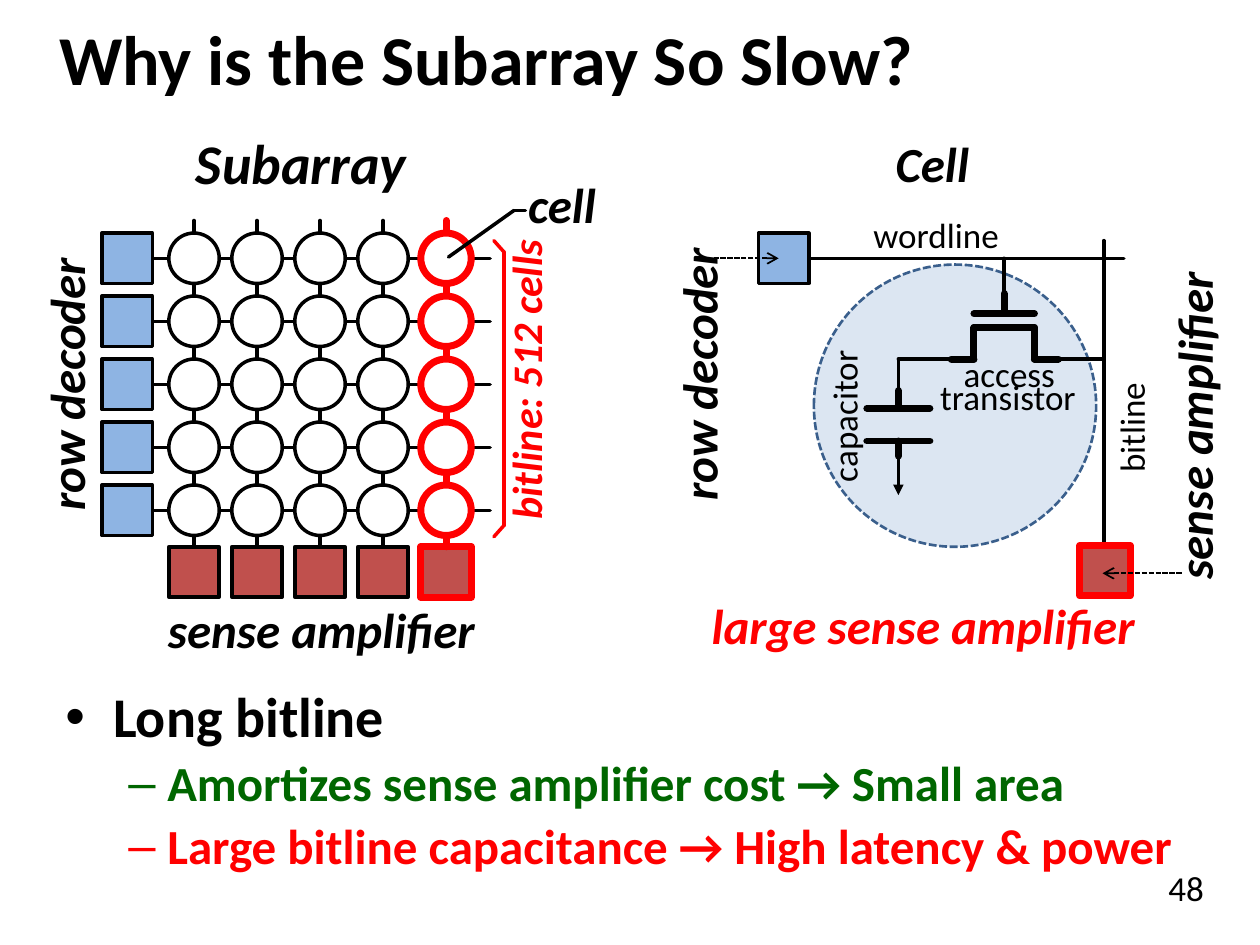
from itertools import pairwise

from lxml import etree
from pptx import Presentation
from pptx import util as u
from pptx.dml.color import RGBColor
from pptx.enum import dml, shapes, text
from pptx.oxml.ns import qn

SCALE = 9144
BLACK = RGBColor(0x00, 0x00, 0x00)
WHITE = RGBColor(0xFF, 0xFF, 0xFF)
RED = RGBColor(0xFF, 0x00, 0x00)
GREEN = RGBColor(0x00, 0x66, 0x00)
DECODER_BLUE = RGBColor(0x8E, 0xB4, 0xE3)
AMPLIFIER_RED = RGBColor(0xC0, 0x50, 0x4D)
CELL_BLUE = RGBColor(0xDC, 0xE6, 0xF2)
CELL_EDGE = RGBColor(0x3A, 0x5F, 0x8C)
FONT = "Calibri"
RECTANGLE = shapes.MSO_SHAPE.RECTANGLE
OVAL = shapes.MSO_SHAPE.OVAL
CENTER = text.PP_ALIGN.CENTER
LEFT = text.PP_ALIGN.LEFT
MIDDLE = text.MSO_ANCHOR.MIDDLE
TOP = text.MSO_ANCHOR.TOP
ROWS = [205 + 50 * row for row in range(5)]
COLUMNS = [154 + 50 * column for column in range(5)]
SIDE = 40


def px(*lengths):
    """Turn pixel lengths into EMU."""
    return [u.Emu(length * SCALE) for length in lengths]


def format_runs(paragraph, size, color, bold, italic=False):
    """Give every run of a paragraph its font."""
    for run in paragraph.runs:
        font = run.font
        font.name, font.size = FONT, u.Pt(size)
        font.bold, font.italic = bold, italic
        font.color.rgb = color


def add_frame(slide, box, margins=(0, 0), anchor=MIDDLE, rotation=0):
    """Add an empty wrapping text box and return its text frame."""
    shape = slide.shapes.add_textbox(*px(*box))
    shape.rotation = rotation
    frame = shape.text_frame
    frame.word_wrap = True
    frame.vertical_anchor = anchor
    frame.margin_left, frame.margin_top = px(*margins)
    frame.margin_right = frame.margin_bottom = 0
    return frame


def add_label(slide, words, box, size=28, color=BLACK, bold=True, italic=True,
              align=CENTER, **layout):
    """Add one line of text in a box."""
    frame = add_frame(slide, box, **layout)
    frame.text = words
    paragraph = frame.paragraphs[0]
    paragraph.alignment = align
    format_runs(paragraph, size, color, bold, italic)


def add_node(slide, kind, center, fill, edge=BLACK, weight=2, side=SIDE):
    """Add an outlined square or circle around a centre point."""
    x, y = center
    shape = slide.shapes.add_shape(kind, *px(x - side // 2, y - side // 2, side, side))
    shape.shadow.inherit = False
    shape.fill.solid()
    shape.fill.fore_color.rgb = fill
    shape.line.color.rgb = edge
    shape.line.width = u.Pt(weight)
    return shape


def add_wire(slide, *points, color=BLACK, weight=2, dashed=False, head=None, tail=None):
    """Join the points with straight connectors."""
    for start, end in pairwise(points):
        connector = slide.shapes.add_connector(
            shapes.MSO_CONNECTOR.STRAIGHT, *px(*start, *end))
        connector.line.color.rgb = color
        connector.line.width = u.Pt(weight)
        properties = connector.element.spPr
        outline = properties.find(qn("a:ln"))
        if dashed:
            connector.line.dash_style = dml.MSO_LINE.SQUARE_DOT
        else:
            outline.set("cap", "rnd")
        for tag, arrow in (("a:headEnd", head), ("a:tailEnd", tail)):
            if arrow:
                etree.SubElement(outline, qn(tag), type=arrow)
        etree.SubElement(properties, qn("a:effectLst"))


def add_bullet(paragraph, words, mark, size, color, margin, indent, before):
    """Fill a paragraph as a bold bulleted line."""
    paragraph.text = words
    paragraph.line_spacing = 0.9
    paragraph.space_before = u.Pt(before)
    format_runs(paragraph, size, color, True)
    properties = paragraph._p.get_or_add_pPr()
    properties.set("marL", str(margin * SCALE))
    properties.set("indent", str(-indent * SCALE))
    etree.SubElement(properties, qn("a:buFont"), typeface="Arial")
    etree.SubElement(properties, qn("a:buChar"), char=mark)


def add_subarray(slide):
    """Draw the grid of cells with its decoders and amplifiers."""
    add_label(slide, "Subarray", (58, 108, 362, 42), size=32)
    for y in ROWS:
        add_wire(slide, (389, y), (121, y))
        add_node(slide, RECTANGLE, (101, y), DECODER_BLUE)
    for x in COLUMNS:
        edge, weight = (RED, 4) if x == COLUMNS[-1] else (BLACK, 2)
        add_node(slide, RECTANGLE, (x, 454), AMPLIFIER_RED, edge, weight)
        add_wire(slide, (x, 434), (x, 175), color=edge, weight=weight)
        for y in ROWS:
            add_node(slide, OVAL, (x, y), WHITE, edge, weight)
    add_label(slide, "row decoder", (-68, 284, 240, 42), rotation=270)
    add_label(slide, "sense amplifier", (102, 473, 306, 53))
    add_label(slide, "bitline: 512 cells", (277, 276, 280, 51), size=24, color=RED,
              rotation=270)
    add_wire(slide, (392, 191), (400, 200), (400, 417), (392, 426), color=RED)
    add_wire(slide, (417, 167), (408, 167), (356, 204))
    add_label(slide, "cell", (400, 142, 92, 39))


def add_cell(slide):
    """Draw one cell with its transistor, capacitor and lines."""
    circle = add_node(slide, OVAL, (758, 322), CELL_BLUE, CELL_EDGE, 1.5, side=224)
    circle.line.dash_style = dml.MSO_LINE.SQUARE_DOT
    add_node(slide, RECTANGLE, (622, 205), DECODER_BLUE)
    for words, box, rotation in (
        ("capacitor", (607, 311, 125, 39), 270),
        ("access", (730, 276, 142, 41), 0),
        ("transistor", (730, 291, 140, 47), 0),
        ("wordline", (630, 168, 226, 36), 0),
        ("bitline", (804, 320, 187, 39), 270),
    ):
        add_label(slide, words, box, size=20, bold=False, italic=False, rotation=rotation)
    for points in (
        [(892, 205), (642, 205)],
        [(876, 442), (876, 191)],
        [(797, 205), (797, 236)],
        [(876, 285), (840, 285)],
        [(755, 285), (713, 285), (713, 310)],
    ):
        add_wire(slide, *points)
    for points in (
        [(797, 248), (797, 233)],
        [(821, 249), (773, 249)],
        [(755, 285), (773, 285), (773, 260), (821, 260), (821, 285), (840, 285)],
        [(713, 324), (713, 310)],
        [(738, 324), (688, 324)],
        [(738, 350), (688, 350)],
        [(713, 362), (713, 350)],
    ):
        add_wire(slide, *points, weight=4)
    add_wire(slide, (713, 362), (713, 393), tail="triangle")
    add_label(slide, "Cell", (602, 108, 276, 42))
    add_label(slide, "large sense amplifier", (555, 467, 370, 58), color=RED,
              align=LEFT, margins=(10, 0))
    add_node(slide, RECTANGLE, (877, 453), AMPLIFIER_RED, RED, 4)
    add_label(slide, "sense amplifier", (802, 317, 290, 42), rotation=270)
    add_label(slide, "row decoder", (409, 276, 290, 42), rotation=270)
    for start, end in (((875, 455), (938, 455)), ((618, 205), (567, 205))):
        add_wire(slide, start, end, weight=1, dashed=True, head="arrow")


def add_points(slide):
    """Write the bulleted conclusions."""
    frame = add_frame(slide, (42, 542, 908, 158), margins=(10, 5), anchor=TOP)
    add_bullet(frame.paragraphs[0], "Long bitline", "•", 32, BLACK, 38, 38, 0)
    for words, color in (
        ("Amortizes sense amplifier cost → Small area", GREEN),
        ("Large bitline capacitance → High latency & power", RED),
    ):
        add_bullet(frame.add_paragraph(), words, "–", 28, color, 81, 31, 5.6)


def main():
    """Build the slide and save it."""
    presentation = Presentation()
    presentation.slide_width, presentation.slide_height = px(1000, 750)
    slide = presentation.slides.add_slide(presentation.slide_layouts[6])
    add_label(slide, "Why is the Subarray So Slow?", (0, 0, 1000, 92), size=40,
              italic=False, align=LEFT, margins=(47, 0))
    add_label(slide, "48", (883, 683, 117, 67), size=20, bold=False, italic=False,
              anchor=TOP, margins=(0, 5))
    add_subarray(slide)
    add_cell(slide)
    add_points(slide)
    presentation.save("out.pptx")


if __name__ == "__main__":
    main()
